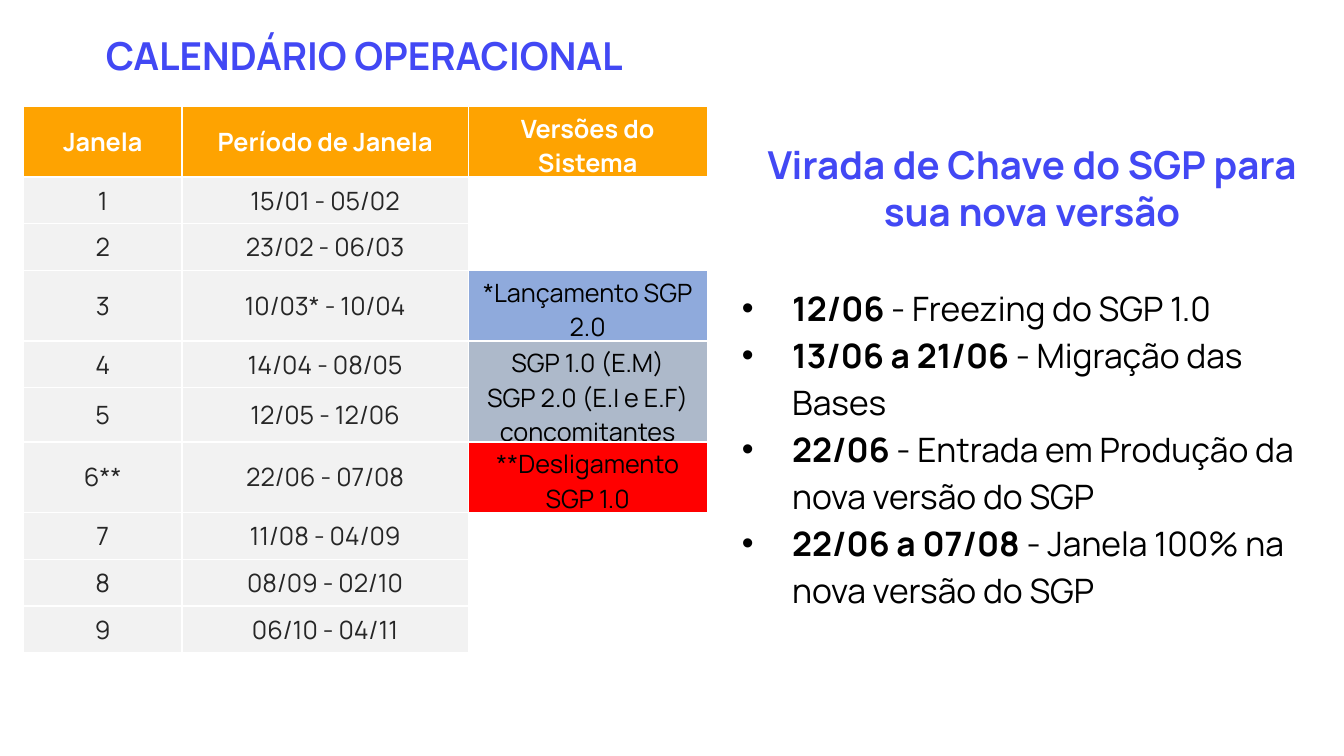
"""Builds the operational calendar slide with its SGP switchover schedule."""
import lxml.etree
import pptx
import pptx.dml.color
import pptx.enum.text
import pptx.oxml.ns
import pptx.util

Pt = pptx.util.Pt
CENTER = pptx.enum.text.PP_ALIGN.CENTER
LEFT = pptx.enum.text.PP_ALIGN.LEFT
MIDDLE = pptx.enum.text.MSO_ANCHOR.MIDDLE
TOP = pptx.enum.text.MSO_ANCHOR.TOP


def color(value):
    return pptx.dml.color.RGBColor.from_string(value)


def write(paragraph, text, size=18, ink="000000", bold=False, font="Manrope"):
    run = paragraph.add_run()
    run.text = text
    run.font.name = font
    run.font.size = Pt(size)
    run.font.bold = bold
    run.font.color.rgb = color(ink)


class CalendarSlide:
    accent = "4248F4"
    title_size = 27.5
    leading = 33.6
    indent = 36

    def __init__(self, deck):
        self.slide = deck.slides.add_slide(deck.slide_layouts[6])

    def text_box(self, left, top, width, height, anchor=TOP):
        frame = self.slide.shapes.add_textbox(Pt(left), Pt(top), Pt(width), Pt(height)).text_frame
        frame.word_wrap = True
        frame.vertical_anchor = anchor
        frame.margin_left = frame.margin_right = frame.margin_top = frame.margin_bottom = 0
        return frame

    def title(self, frame, text):
        heading = frame.paragraphs[0]
        heading.alignment = CENTER
        heading.line_spacing = Pt(self.leading)
        write(heading, text, size=self.title_size, ink=self.accent, bold=True)

    def bullet(self, frame, date, event, space_before=0):
        item = frame.add_paragraph()
        properties = item._p.get_or_add_pPr()
        properties.set("marL", str(Pt(self.indent)))
        properties.set("indent", str(-Pt(self.indent)))
        font = lxml.etree.SubElement(properties, pptx.oxml.ns.qn("a:buFont"))
        font.set("typeface", "Arial")
        mark = lxml.etree.SubElement(properties, pptx.oxml.ns.qn("a:buChar"))
        mark.set("char", "•")
        item.alignment = LEFT
        item.line_spacing = Pt(self.leading)
        item.space_before = Pt(space_before)
        write(item, date, size=24, bold=True)
        write(item, f" - {event}", size=24)

    def table(self, left, top, widths, heights):
        grid = self.slide.shapes.add_table(
            len(heights), len(widths), Pt(left), Pt(top), Pt(sum(widths)), Pt(sum(heights))
        ).table
        grid.horz_banding = False
        for column, width in zip(grid.columns, widths):
            column.width = Pt(width)
        for row, height in zip(grid.rows, heights):
            row.height = Pt(height)
        return grid

    def cell(self, cell, lines, fill, **style):
        cell.fill.solid()
        cell.fill.fore_color.rgb = color(fill)
        cell.vertical_anchor = MIDDLE
        for index, line in enumerate(lines):
            paragraph = cell.text_frame.add_paragraph() if index else cell.text_frame.paragraphs[0]
            paragraph.alignment = CENTER
            write(paragraph, line, **style)


def main():
    deck = pptx.Presentation()
    deck.slide_width, deck.slide_height = Pt(960), Pt(540)
    page = CalendarSlide(deck)

    switchover = page.text_box(529.9, 100.1, 414.7, 340.6)
    page.title(switchover, "Virada de Chave do SGP para sua nova versão")
    milestones = [
        ("12/06", "Freezing do SGP 1.0"),
        ("13/06 a 21/06", "Migração das Bases"),
        ("22/06", "Entrada em Produção da nova versão do SGP"),
        ("22/06 a 07/08", "Janela 100% na nova versão do SGP"),
    ]
    for index, (date, event) in enumerate(milestones):
        page.bullet(switchover, date, event, space_before=0 if index else page.leading)

    page.title(page.text_box(25.2, 22.3, 470.2, 33.1, MIDDLE), "CALENDÁRIO OPERACIONAL")

    windows = [
        ("1", "15/01 - 05/02"),
        ("2", "23/02 - 06/03"),
        ("3", "10/03* - 10/04"),
        ("4", "14/04 - 08/05"),
        ("5", "12/05 - 12/06"),
        ("6**", "22/06 - 07/08"),
        ("7", "11/08 - 04/09"),
        ("8", "08/09 - 02/10"),
        ("9", "06/10 - 04/11"),
    ]
    calendar = page.table(16.8, 76, [113.2, 204.5, 170.6], [32.4] + [33.4] * len(windows))
    for column, heading in enumerate(["Janela", "Período de Janela", "Versões do Sistema"]):
        page.cell(calendar.cell(0, column), [heading], "FEA301", ink="FFFFFF", bold=True)
    for row, window in enumerate(windows, start=1):
        for column, value in enumerate(window):
            page.cell(calendar.cell(row, column), [value], "F2F2F2", ink="262626")

    versions = [
        (1, 1, [], "FFFFFF"),
        (2, 2, [], "FFFFFF"),
        (3, 3, ["*Lançamento SGP 2.0"], "8FAADC"),
        (4, 5, ["SGP 1.0 (E.M)", "SGP 2.0 (E.I e E.F)", "concomitantes"], "ADB9CA"),
        (6, 6, ["**Desligamento SGP 1.0"], "FF0000"),
        (7, 9, [], "FFFFFF"),
    ]
    for first, last, lines, fill in versions:
        version = calendar.cell(first, 2)
        if last > first:
            version.merge(calendar.cell(last, 2))
        page.cell(version, lines, fill)

    deck.save("out.pptx")


if __name__ == "__main__":
    main()
